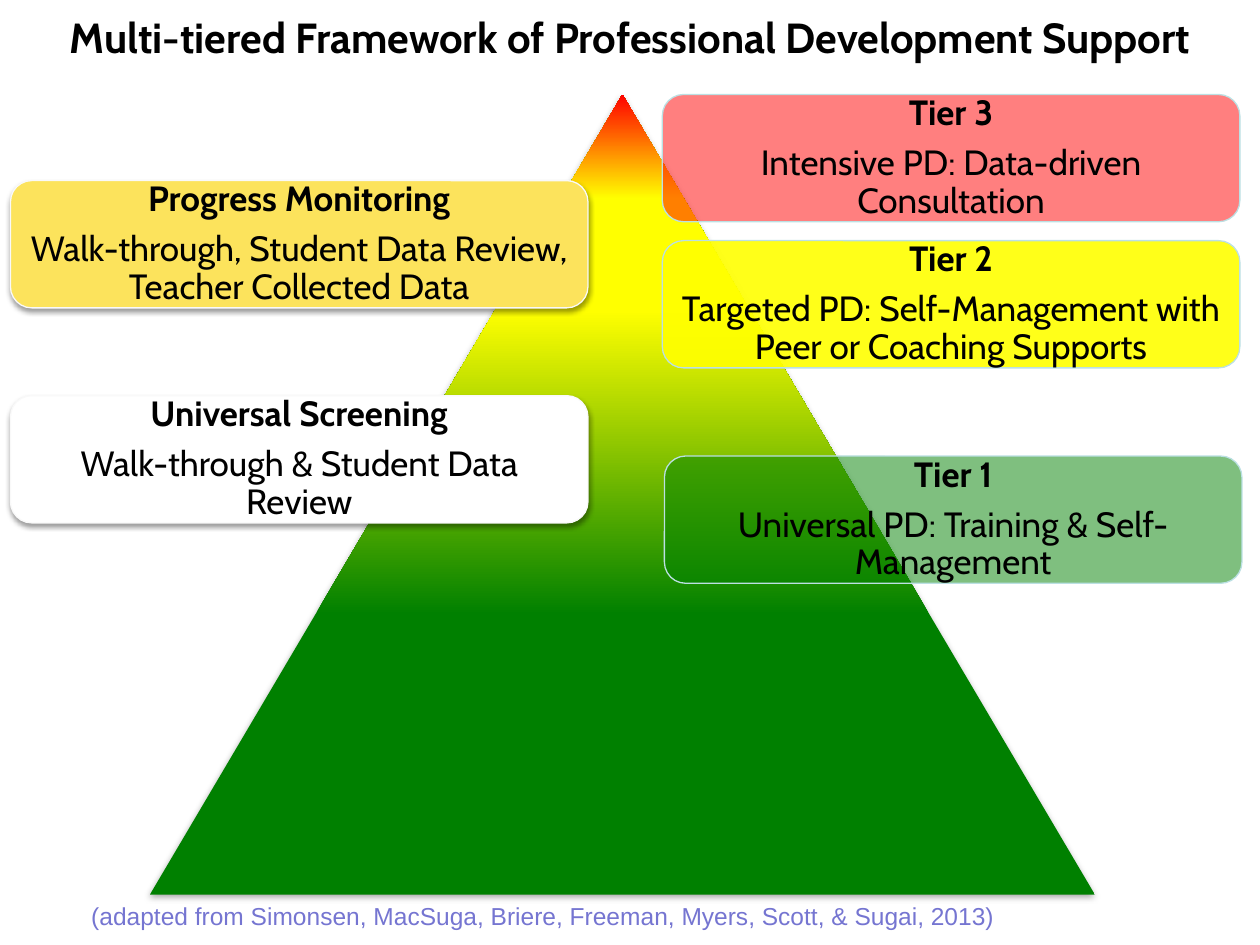
from lxml.etree import SubElement
from pptx import Presentation
from pptx.dml.color import RGBColor
from pptx.enum.shapes import MSO_SHAPE
from pptx.enum.text import MSO_ANCHOR, MSO_AUTO_SIZE, PP_ALIGN
from pptx.oxml import parse_xml
from pptx.oxml.ns import nsdecls, qn
from pptx.util import Pt

BLACK = RGBColor(0, 0, 0)
WHITE = RGBColor(255, 255, 255)
RED = RGBColor(255, 0, 0)
YELLOW = RGBColor(255, 255, 0)
GREEN = RGBColor(0, 128, 0)
GOLD = RGBColor(0xFC, 0xE3, 0x5C)
PALE = RGBColor(0xF9, 0xF9, 0xF9)
AQUA = RGBColor(0xBB, 0xE0, 0xE3)
LILAC = RGBColor(0x75, 0x75, 0xD1)


def style(para, size, color, font="Cabin", bold=False):
    for run in para.runs:
        run.font.name = font
        run.font.size = Pt(size)
        run.font.bold = bold
        run.font.color.rgb = color


def shade(shape, alpha, dist):
    """Cast a soft black shadow straight down; alpha in percent."""
    shape.shadow.inherit = False
    effects = shape._element.spPr.find(qn("a:effectLst"))
    outer = SubElement(effects, qn("a:outerShdw"), blurRad=str(Pt(3.1)),
                       dist=str(Pt(dist)), dir="5400000", rotWithShape="0")
    color = SubElement(outer, qn("a:srgbClr"), val=str(BLACK))
    SubElement(color, qn("a:alpha"), val=str(alpha * 1000))


prs = Presentation()
prs.slide_width, prs.slide_height = Pt(720), Pt(540)
slide = prs.slides.add_slide(prs.slide_layouts[5])
shapes = slide.shapes

title = shapes.title
title.left, title.top, title.width, title.height = Pt(-12), Pt(0), Pt(744), Pt(42)
title.text_frame.text = "Multi-tiered Framework of Professional Development Support"
title.text_frame.vertical_anchor = MSO_ANCHOR.MIDDLE
para = title.text_frame.paragraphs[0]
para.alignment = PP_ALIGN.CENTER
style(para, 24, BLACK, bold=True)

# Pyramid, green at the base to red at the tip
tri = shapes.add_shape(MSO_SHAPE.ISOSCELES_TRIANGLE, Pt(85.7), Pt(54), Pt(540), Pt(457.2))
tri.line.fill.background()
stops = "".join(
    f'<a:gs pos="{pos * 1000}"><a:srgbClr val="{color}"/></a:gs>'
    for pos, color in [(35, GREEN), (73, YELLOW), (87, YELLOW), (100, RED)])
grad = parse_xml(f'<a:gradFill {nsdecls("a")} rotWithShape="1"><a:gsLst>{stops}</a:gsLst>'
                 '<a:lin ang="16200000" scaled="0"/></a:gradFill>')
tri._element.spPr.find(qn("a:prstGeom")).addnext(grad)
shade(tri, 35, 1.8)

# left, top, fill, opacity in percent, line, heading, detail
CARDS = [
    (378.5, 54, RED, 50, AQUA, "Tier 3", "Intensive PD: Data-driven Consultation"),
    (378.5, 137.5, YELLOW, 90, AQUA, "Tier 2",
     "Targeted PD: Self-Management with Peer or Coaching Supports"),
    (379.7, 260.6, GREEN, 50, AQUA, "Tier 1", "Universal PD: Training & Self-Management"),
    (6, 103.2, GOLD, 100, PALE, "Progress Monitoring",
     "Walk-through, Student Data Review, Teacher Collected Data"),
    (6, 226.1, WHITE, 100, PALE, "Universal Screening",
     "Walk-through & Student Data Review"),
]
for left, top, fill, alpha, line, head, detail in CARDS:
    card = shapes.add_shape(MSO_SHAPE.ROUNDED_RECTANGLE, Pt(left), Pt(top), Pt(330), Pt(72.7))
    card.fill.solid()
    card.fill.fore_color.rgb = fill
    card.line.color.rgb = line
    card.line.width = Pt(0.75)
    if alpha < 100:
        card.shadow.inherit = False
        color = card._element.spPr.find(qn("a:solidFill")).find(qn("a:srgbClr"))
        SubElement(color, qn("a:alpha"), val=str(alpha * 1000))
    else:
        shade(card, 38, 1.6)
    frame = card.text_frame
    frame.word_wrap = True
    frame.vertical_anchor = MSO_ANCHOR.MIDDLE
    frame.margin_left = frame.margin_right = Pt(5.75)
    frame.margin_top = frame.margin_bottom = Pt(5.75)
    frame.text = f"{head}\n{detail}"
    for i, para in enumerate(frame.paragraphs):
        para.alignment = PP_ALIGN.CENTER
        para.line_spacing = 0.9
        para.space_after = Pt(7)
        style(para, 20, BLACK, bold=i == 0)

credit = shapes.add_textbox(Pt(41.8), Pt(511.2), Pt(534), Pt(24.5)).text_frame
credit.word_wrap = True
credit.auto_size = MSO_AUTO_SIZE.SHAPE_TO_FIT_TEXT
credit.text = "(adapted from Simonsen, MacSuga, Briere, Freeman, Myers, Scott, & Sugai, 2013)"
credit.paragraphs[0].alignment = PP_ALIGN.RIGHT
style(credit.paragraphs[0], 14, LILAC, font="Arial")

prs.save("out.pptx")
